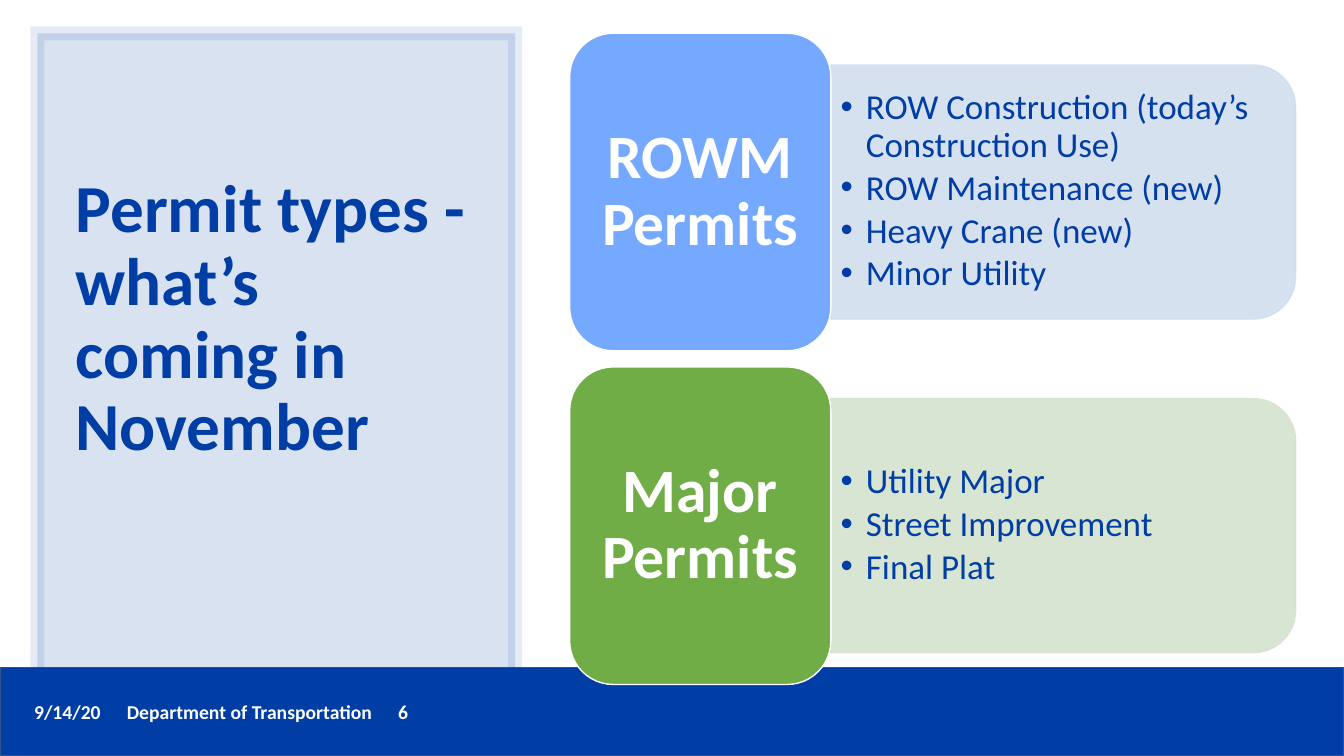
from lxml import etree
from pptx import Presentation
from pptx.dml.color import RGBColor
from pptx.enum.shapes import MSO_SHAPE
from pptx.enum.text import MSO_ANCHOR, PP_ALIGN
from pptx.oxml.ns import qn
from pptx.util import Inches, Pt

RECT = MSO_SHAPE.RECTANGLE
ROUND = MSO_SHAPE.ROUNDED_RECTANGLE
HALF = MSO_SHAPE.ROUND_2_SAME_RECTANGLE
TOP, MID = MSO_ANCHOR.TOP, MSO_ANCHOR.MIDDLE
LEFT, CENTER = PP_ALIGN.LEFT, PP_ALIGN.CENTER
BLUE, WHITE = "003DA5", "FFFFFF"
FONT = "Calibri"
PERMITS = [
    ("ROWM Permits", "75A8FF", "D2DEEF",
     ["ROW Construction (today’s Construction Use)", "ROW Maintenance (new)",
      "Heavy Crane (new)", "Minor Utility"]),
    ("Major Permits", "70AD47", "D5E3CF",
     ["Utility Major", "Street Improvement", "Final Plat"]),
]


def color(code):
    """Return the colour for a hex string."""
    return RGBColor.from_string(code)


def fade(shape, where, share):
    """Set the opacity in percent of the solid fill found at a path."""
    tint = shape.element.spPr.find(where)[0]
    etree.SubElement(tint, qn("a:alpha"), val=str(share * 1000))


def add_box(slide, kind, box, fill, line, width=1, alpha=None):
    """Add a filled shape with sharp joins; alpha is fill and line opacity."""
    shape = slide.shapes.add_shape(kind, *map(Inches, box))
    shape.shadow.inherit = False
    shape.fill.solid()
    shape.fill.fore_color.rgb = color(fill)
    shape.line.color.rgb = color(line)
    shape.line.width = Pt(width)
    edge = shape.element.spPr.find(qn("a:ln"))
    etree.SubElement(edge, qn("a:miter"), lim="800000")
    if alpha:
        fade(shape, qn("a:solidFill"), alpha[0])
        fade(shape, qn("a:ln") + "/" + qn("a:solidFill"), alpha[1])
    return shape


def add_mark(para):
    """Give a paragraph a hanging bullet."""
    props = para._p.get_or_add_pPr()
    props.set("marL", str(Inches(0.25)))
    props.set("indent", str(-Inches(0.25)))
    etree.SubElement(props, qn("a:buFont"), typeface="Arial")
    etree.SubElement(props, qn("a:buChar"), char="•")


def add_tabs(para, stops):
    """Give a paragraph left tab stops, in inches."""
    tabs = etree.SubElement(para._p.get_or_add_pPr(), qn("a:tabLst"))
    for stop in stops:
        etree.SubElement(tabs, qn("a:tab"), pos=str(Inches(stop)), algn="l")


def set_text(shape, lines, size, ink=BLUE, bold=False, align=LEFT, anchor=MID,
             inset=(0.1, 0.05, 0.1, 0.05), spacing=0.9, after=0,
             bullet=False, tabs=()):
    """Fill a shape with formatted paragraphs."""
    frame = shape.text_frame
    frame.word_wrap = True
    frame.vertical_anchor = anchor
    (frame.margin_left, frame.margin_top,
     frame.margin_right, frame.margin_bottom) = map(Inches, inset)
    for i, line in enumerate(lines):
        para = frame.add_paragraph() if i else frame.paragraphs[0]
        if bullet:
            add_mark(para)
        if tabs:
            add_tabs(para, tabs)
        para.alignment = align
        para.line_spacing = spacing
        para.space_before = Pt(0)
        para.space_after = Pt(after)
        run = para.add_run()
        run.text = line
        font = run.font
        font.name, font.size, font.bold = FONT, Pt(size), bold
        font.color.rgb = color(ink)


def add_footer(slide, x, y, w, h):
    """Draw the bottom band with date, department and page."""
    add_box(slide, RECT, (x, y, w, h), BLUE, "31538F")
    note = slide.shapes.add_textbox(
        *map(Inches, (x + 0.24, y + 0.27, 10.06, 0.34)))
    set_text(note, ["9/14/20\tDepartment of Transportation\t6"], 14, WHITE,
             bold=True, anchor=TOP, spacing=1, tabs=(0.92, 3.61))


def add_title(slide, x, y, w, h):
    """Draw the framed title panel."""
    add_box(slide, RECT, (x, y, w, h), BLUE, BLUE, 10, (15, 10))
    title = slide.shapes.title
    title.left, title.top = Inches(x + 0.28), Inches(y + 0.37)
    title.width, title.height = Inches(w - 0.58), Inches(h - 0.7)
    set_text(title, ["Permit types - what’s coming in November"], 48,
             bold=True, inset=(0.1, 0.05, 0.1, 0.85))
    title.element.getparent().append(title.element)


def add_permit(slide, x, y, w, h, name, fill, tint, items):
    """Draw one permit group: a name tile and its list."""
    tile, tall = 2.59, h * 0.8
    wide = w - tile
    left, mid = x + tile, y + h / 2
    back = add_box(slide, HALF,
                   (left + (wide - tall) / 2, mid - wide / 2, tall, wide),
                   tint, tint, alpha=(90, 90))
    back.rotation = 90
    body = slide.shapes.add_textbox(
        *map(Inches, (left, mid - 1.14, wide - 0.12, 2.27)))
    set_text(body, items, 25, after=3.5, bullet=True)
    label = add_box(slide, ROUND, (x, y, tile, h), fill, WHITE)
    set_text(label, [name], 44, WHITE, bold=True, align=CENTER,
             inset=(0.15, 0.09, 0.15, 0.09))


def main():
    """Build and save the slide."""
    deck = Presentation()
    deck.slide_width, deck.slide_height = Inches(13.33), Inches(7.5)
    slide = deck.slides.add_slide(deck.slide_layouts[5])
    add_footer(slide, 0, 6.62, 13.33, 0.88)
    add_title(slide, 0.37, 0.33, 4.74, 6.45)
    for i, permit in enumerate(PERMITS):
        add_permit(slide, 5.65, 0.33 + i * 3.31, 7.2, 3.15, *permit)
    deck.save("out.pptx")


if __name__ == "__main__":
    main()
